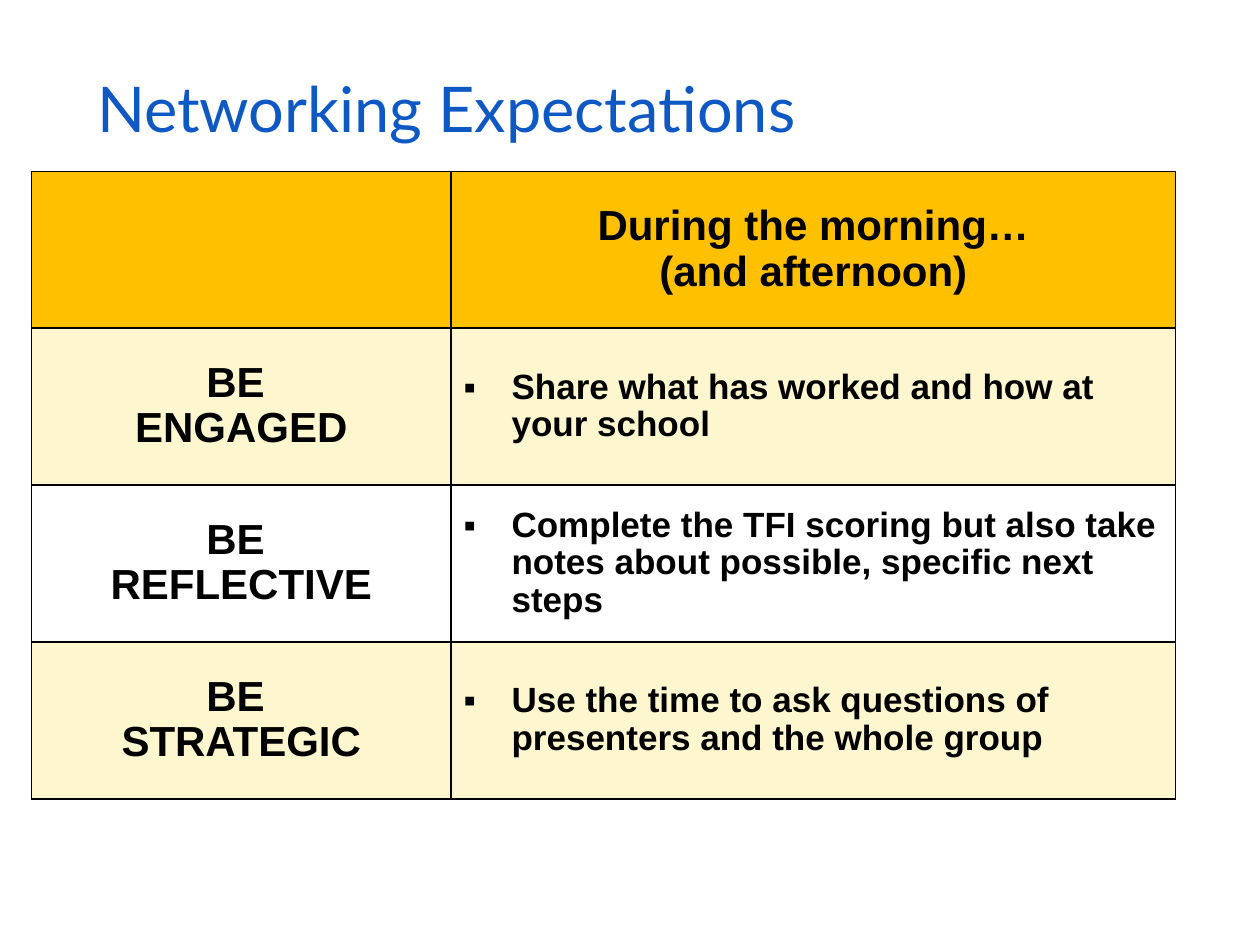
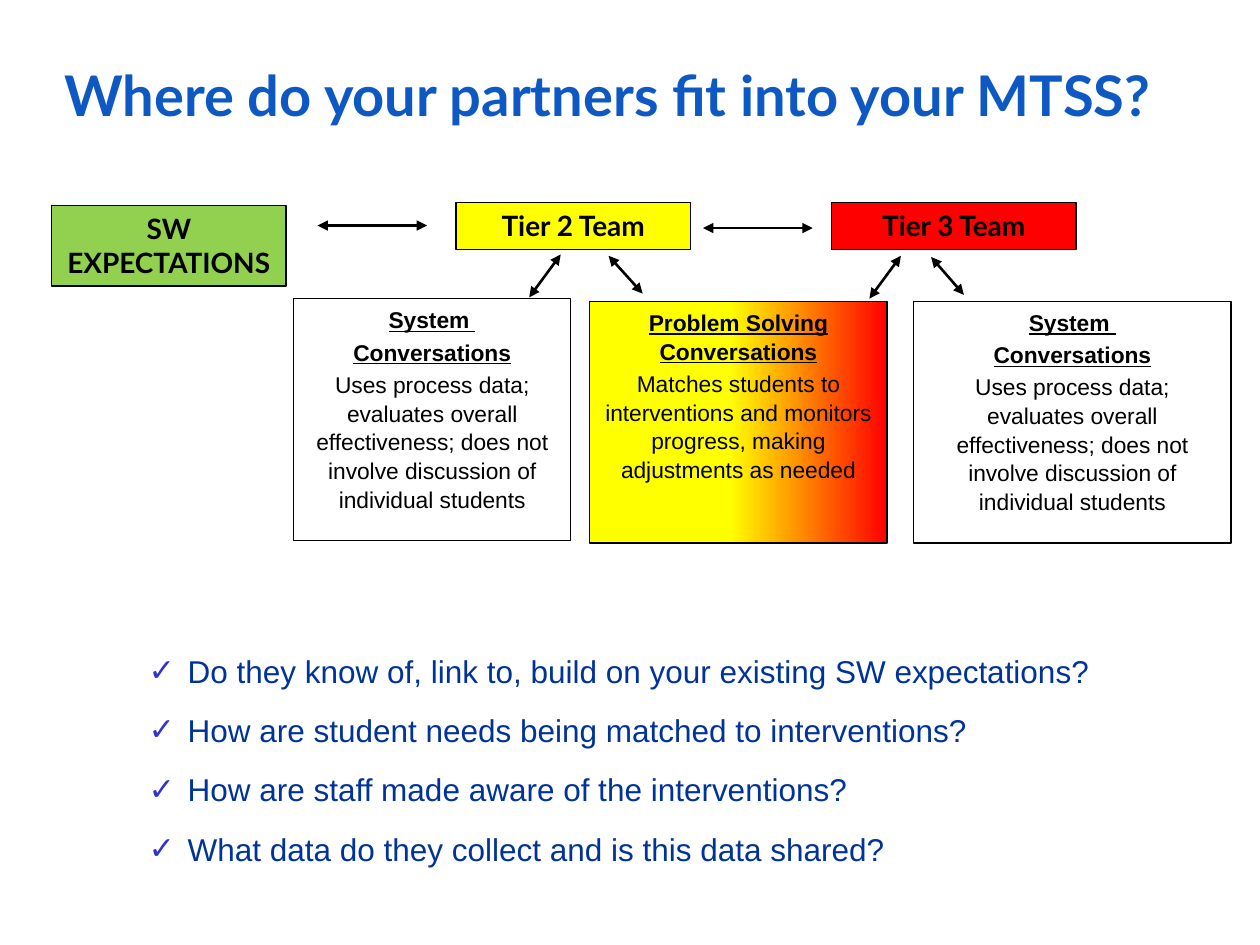
from typing import NamedTuple, Optional

from lxml.etree import SubElement
from pptx import Presentation
from pptx.dml.color import RGBColor
from pptx.enum.shapes import MSO_CONNECTOR as Link, MSO_SHAPE as Form
from pptx.enum.text import MSO_ANCHOR as Anchor, MSO_AUTO_SIZE as Fit, PP_ALIGN as Align
from pptx.oxml.ns import qn
from pptx.util import Inches, Pt

WIDE, TALL = Inches(10), Inches(7.5)
COLS, ROWS = 100, 75

BLUE = RGBColor(0x0E, 0x58, 0xC4)
NAVY = RGBColor(0x00, 0x33, 0x99)
VIOLET = RGBColor(0x33, 0x33, 0xCC)
BLACK = RGBColor(0, 0, 0)
WHITE = RGBColor(0xFF, 0xFF, 0xFF)
GOLD = RGBColor(0xFF, 0xC0, 0x00)
CREAM = RGBColor(0xFD, 0xF6, 0xCF)
RED = RGBColor(0xFF, 0x00, 0x00)
YELLOW = RGBColor(0xFF, 0xFF, 0x00)
GREEN = RGBColor(0x92, 0xD0, 0x50)

HEAD, BODY = "Lato", "Arial"


class Box(NamedTuple):
    """A place on the grid of COLS by ROWS."""
    col: float
    row: float
    wide: float
    tall: float


class Type(NamedTuple):
    face: str
    size: float
    tint: RGBColor = BLACK
    bold: bool = False
    under: bool = False


class Team(NamedTuple):
    name: str
    box: Box
    fill: RGBColor


class Talk(NamedTuple):
    heads: list[str]
    text: str
    box: Box
    fill: Optional[RGBColor]  # None blends the two team colours


class Arrow(NamedTuple):
    col: float
    row: float
    end_col: float
    end_row: float


LABEL = Type(BODY, 24, bold=True)
POINT = Type(BODY, 20, bold=True)
TEAM = Type(HEAD, 16, bold=True)
TOPIC = Type(BODY, 13, bold=True, under=True)
PLAIN = Type(BODY, 13)
ASK = Type(BODY, 18, NAVY)

GRID = Box(2.5, 13.6, 90.8, 49.8)
SPLIT = 33.3
TOP = ["During the morning…", "(and afternoon)"]
GOALS = [
    ("ENGAGED", "Share what has worked and how at your school"),
    ("REFLECTIVE", "Complete the TFI scoring but also take notes about "
                   "possible, specific next steps"),
    ("STRATEGIC", "Use the time to ask questions of presenters and the whole group"),
]

TEAMS = [
    Team("SW EXPECTATIONS", Box(4.1, 16.3, 18.6, 6.4), GREEN),
    Team("Tier 2 Team", Box(36.2, 16.1, 18.6, 3.7), YELLOW),
    Team("Tier 3 Team", Box(66, 16.1, 19.4, 3.7), RED),
]
SYSTEM = ["System ", "Conversations"]
PROCESS = ("Uses process data; evaluates overall effectiveness; "
           "does not involve discussion of individual students")
MATCH = ("Matches students to interventions and monitors progress, "
         "making adjustments as needed")
TALKS = [
    Talk(SYSTEM, PROCESS, Box(23.3, 23.7, 22, 19.2), WHITE),
    Talk(["Problem Solving Conversations"], MATCH, Box(46.8, 23.9, 23.6, 19.2), None),
    Talk(SYSTEM, PROCESS, Box(72.5, 23.9, 25.2, 19.2), WHITE),
]
ARROWS = [
    Arrow(25.2, 17.9, 33.9, 17.9),
    Arrow(55.8, 18.1, 64.5, 18.1),
    Arrow(44.5, 20.2, 42, 23.6),
    Arrow(48.3, 20.3, 51, 23.3),
    Arrow(71.5, 20.3, 69, 23.7),
    Arrow(73.9, 20.4, 76.5, 23.4),
]
ASKS = [
    "Do they know of, link to, build on your existing SW expectations?",
    "How are student needs being matched to interventions?",
    "How are staff made aware of the interventions?",
    "What data do they collect and is this data shared?",
]


def across(cols: float) -> int:
    return round(WIDE * cols / COLS)


def down(rows: float) -> int:
    return round(TALL * rows / ROWS)


def span(box: Box) -> tuple[int, int, int, int]:
    return across(box.col), down(box.row), across(box.wide), down(box.tall)


def place(shape, box: Box) -> None:
    shape.left, shape.top, shape.width, shape.height = span(box)


def style(para, kind: Type, align=Align.LEFT, lead: float = 1, gap: float = 0) -> None:
    font = para.font
    font.name, font.size, font.bold = kind.face, Pt(kind.size), kind.bold
    font.underline = kind.under
    font.color.rgb = kind.tint
    para.alignment, para.line_spacing, para.space_before = align, lead, Pt(gap)


def write(frame, lines: list[str]) -> list:
    """Put one line in each paragraph and give the paragraphs back."""
    frame.text = "\n".join(lines)
    return list(frame.paragraphs)


def mark(para, sign: str, indent: float, tint: RGBColor) -> None:
    """Hang a bullet; call before style, which adds the last child."""
    props = para._p.get_or_add_pPr()
    props.set("marL", str(across(indent)))
    props.set("indent", str(-across(indent)))
    SubElement(SubElement(props, qn("a:buClr")), qn("a:srgbClr"), val=str(tint))
    SubElement(props, qn("a:buFont"), typeface=BODY)
    SubElement(props, qn("a:buChar"), char=sign)


def add_slide(deck, layout: int, title: str, box: Box, size: float, bold: bool):
    slide = deck.slides.add_slide(deck.slide_layouts[layout])
    head = slide.shapes.title
    place(head, box)
    frame = head.text_frame
    frame.auto_size, frame.vertical_anchor = Fit.NONE, Anchor.TOP
    style(write(frame, [title])[0], Type(HEAD, size, BLUE, bold))
    return slide


def rule(cell) -> None:
    """Draw a thin black line on all four sides."""
    props = cell._tc.get_or_add_tcPr()
    for spot, side in enumerate(("lnL", "lnR", "lnT", "lnB")):
        line = SubElement(props, qn(f"a:{side}"), w=str(Pt(1)))
        fill = SubElement(line, qn("a:solidFill"))
        SubElement(fill, qn("a:srgbClr"), val=str(BLACK))
        props.insert(spot, line)


def label(cell, lines: list[str]) -> None:
    for para in write(cell.text_frame, lines):
        style(para, LABEL, Align.CENTER, 0.97)


def add_goals(slide) -> None:
    count = len(GOALS) + 1
    table = slide.shapes.add_table(count, 2, *span(GRID)).table
    table.first_row = table.horz_banding = False
    table.columns[0].width = across(SPLIT)
    table.columns[1].width = across(GRID.wide - SPLIT)
    for num, row in enumerate(table.rows):
        row.height = down(GRID.tall / count)
        for cell in row.cells:
            cell.fill.solid()
            cell.fill.fore_color.rgb = GOLD if num == 0 else CREAM if num % 2 else WHITE
            cell.vertical_anchor = Anchor.MIDDLE
            rule(cell)
    label(table.cell(0, 1), TOP)
    for num, (goal, task) in enumerate(GOALS, 1):
        label(table.cell(num, 0), ["BE ", goal])
        para = write(table.cell(num, 1).text_frame, [task])[0]
        mark(para, "▪", 3.8, BLACK)
        style(para, POINT, lead=0.97)


def add_box(slide, box: Box, fill: Optional[RGBColor]):
    shape = slide.shapes.add_shape(Form.RECTANGLE, *span(box))
    shape.shadow.inherit = False
    shape.line.color.rgb, shape.line.width = BLACK, Pt(0.75)
    if fill is None:
        shape.fill.gradient()
        shape.fill.gradient_angle = 0
        for stop, spot, tint in zip(shape.fill.gradient_stops, (0.47, 1), (YELLOW, RED)):
            stop.position, stop.color.rgb = spot, tint
    else:
        shape.fill.solid()
        shape.fill.fore_color.rgb = fill
    frame = shape.text_frame
    frame.word_wrap, frame.vertical_anchor = True, Anchor.TOP
    return frame


def add_team(slide, team: Team) -> None:
    frame = add_box(slide, team.box, team.fill)
    style(write(frame, [team.name])[0], TEAM, Align.CENTER)


def add_talk(slide, talk: Talk) -> None:
    frame = add_box(slide, talk.box, talk.fill)
    for num, para in enumerate(write(frame, [*talk.heads, talk.text])):
        kind = TOPIC if num < len(talk.heads) else PLAIN
        style(para, kind, Align.CENTER, 1.05, 2 if num else 0)


def add_arrow(slide, arrow: Arrow) -> None:
    line = slide.shapes.add_connector(
        Link.STRAIGHT, across(arrow.col), down(arrow.row),
        across(arrow.end_col), down(arrow.end_row))
    line.line.color.rgb, line.line.width = BLACK, Pt(1.5)
    stroke = line.line._get_or_add_ln()
    for end in ("headEnd", "tailEnd"):
        SubElement(stroke, qn(f"a:{end}"), type="triangle")
    SubElement(line._element.spPr, qn("a:effectLst"))


def add_asks(slide) -> None:
    body = slide.placeholders[1]
    place(body, Box(10.8, 49.5, 80, 19.2))
    body.text_frame.auto_size = Fit.NONE
    for para in write(body.text_frame, ASKS):
        mark(para, "✓", 3.1, VIOLET)
        style(para, ASK, lead=1.57)


def main() -> None:
    deck = Presentation()
    deck.slide_width, deck.slide_height = WIDE, TALL

    goals = add_slide(deck, 5, "Networking Expectations",
                      Box(6.7, 5, 69.4, 8.6), 36, False)
    add_goals(goals)

    fit = add_slide(deck, 1, "Where do your partners fit into your MTSS?",
                    Box(4.1, 4.3, 95.9, 8.1), 32, True)
    for team in TEAMS:
        add_team(fit, team)
    for talk in TALKS:
        add_talk(fit, talk)
    for arrow in ARROWS:
        add_arrow(fit, arrow)
    add_asks(fit)

    deck.save("out.pptx")


if __name__ == "__main__":
    main()
